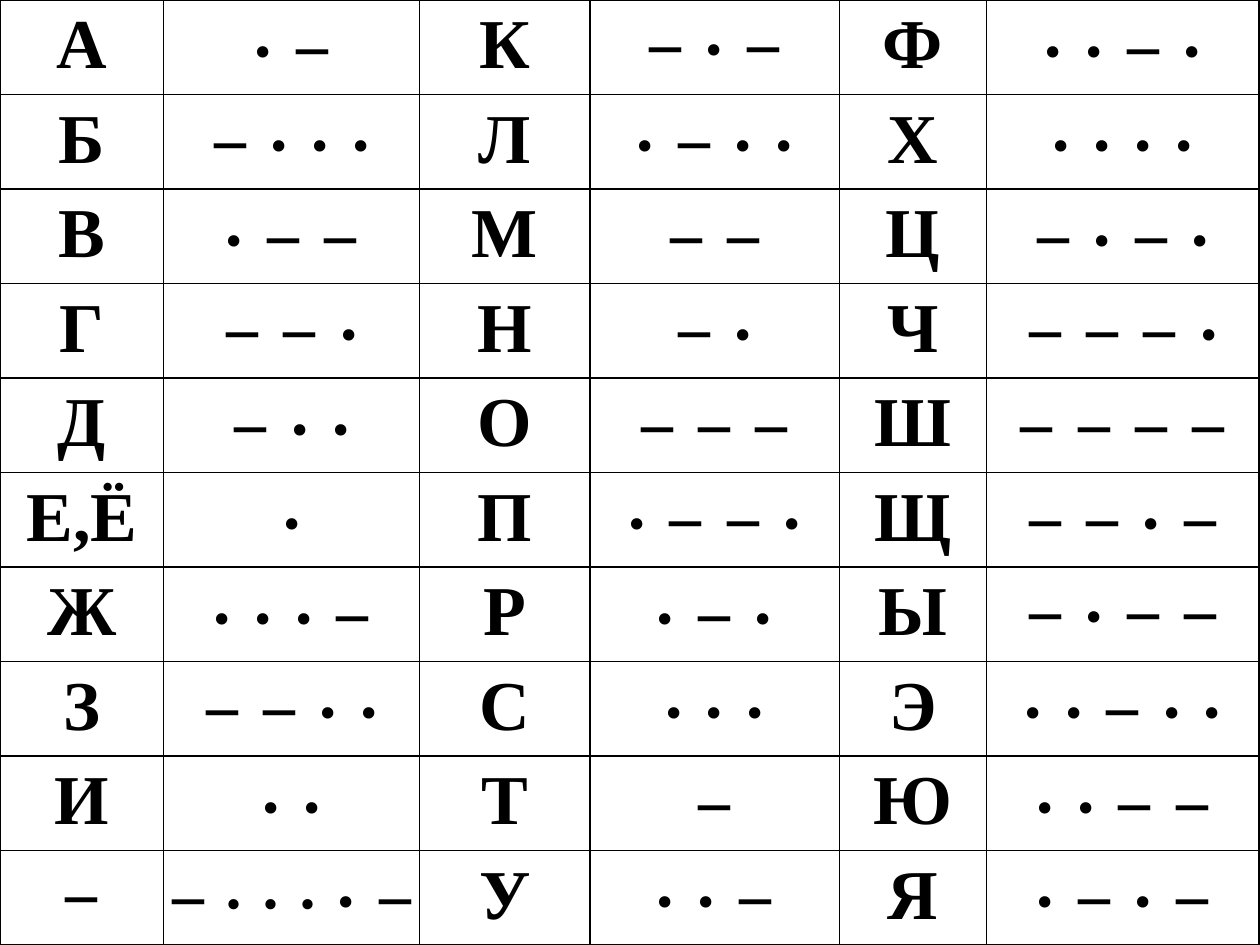
from lxml.etree import SubElement
from pptx import Presentation
from pptx.dml.color import RGBColor
from pptx.enum.text import MSO_ANCHOR, PP_ALIGN
from pptx.oxml.ns import qn
from pptx.util import Cm, Pt

MORSE_ROWS = [
    ("А", "·−", "К", "−·−", "Ф", "··−·"),
    ("Б", "−···", "Л", "·−··", "Х", "····"),
    ("В", "·−−", "М", "−−", "Ц", "−·−·"),
    ("Г", "−−·", "Н", "−·", "Ч", "−−−·"),
    ("Д", "−··", "О", "−−−", "Ш", "−−−−"),
    ("Е,Ё", "·", "П", "·−−·", "Щ", "−−·−"),
    ("Ж", "···−", "Р", "·−·", "Ы", "−·−−"),
    ("З", "−−··", "С", "···", "Э", "··−··"),
    ("И", "··", "Т", "−", "Ю", "··−−"),
    ("−", "−····−", "У", "··−", "Я", "·−·−"),
]
COLUMN_WIDTHS = [3.3, 5.16, 3.43, 5.03, 2.97, 5.49]
ROW_HEIGHT = 1.905
CODE_MARGIN = 0.08
COLORS = {"ink": "000000", "paper": "FFFFFF"}
FONT_NAME = "Times New Roman"
NO_BREAK_SPACE = chr(160)
LOOSE_CODES = {"К", "Ы"}  # letters whose code keeps normal margins and spacing
LONG_CODE = "−····−"


def draw_borders(cell):
    properties = cell._tc.get_or_add_tcPr()
    for side in ("lnL", "lnR", "lnT", "lnB"):
        line = SubElement(properties, qn(f"a:{side}"), w=str(Pt(1)))
        fill = SubElement(line, qn("a:solidFill"))
        SubElement(fill, qn("a:srgbClr"), val=COLORS["ink"])


def write_cell(cell, parts):
    """Fill a cell with (text, size) parts; a size of None keeps the paragraph's."""
    draw_borders(cell)
    cell.fill.solid()
    cell.fill.fore_color.rgb = RGBColor.from_string(COLORS["paper"])
    paragraph = cell.text_frame.paragraphs[0]
    paragraph.alignment = PP_ALIGN.CENTER
    paragraph.font.name = FONT_NAME
    paragraph.font.size = Pt(40)
    paragraph.font.bold = True
    paragraph.font.color.rgb = RGBColor.from_string(COLORS["ink"])
    for text, size in parts:
        run = paragraph.add_run()
        run.text = text
        if size:
            run.font.size = Pt(size)
    return paragraph


def write_letter(cell, letter):
    paragraph = write_cell(cell, [(letter, None)])
    if letter == "−":
        cell.vertical_anchor = MSO_ANCHOR.BOTTOM
        paragraph.line_spacing = Pt(23)


def write_code(cell, letter, code):
    text = NO_BREAK_SPACE.join(code)
    parts = [(text, None)]
    if code == LONG_CODE:
        parts = [(text[0], None), (text[1:8], 36), (text[8:], None)]
    paragraph = write_cell(cell, parts)
    cell.vertical_anchor = MSO_ANCHOR.BOTTOM
    if letter not in LOOSE_CODES:
        paragraph.line_spacing = Pt(12 if code == LONG_CODE else 23)
        cell.margin_left = cell.margin_right = Cm(CODE_MARGIN)
        cell.margin_top = cell.margin_bottom = Cm(CODE_MARGIN)


def main():
    presentation = Presentation()
    presentation.slide_width, presentation.slide_height = Cm(25.4), Cm(19.05)
    slide = presentation.slides.add_slide(presentation.slide_layouts[6])
    table = slide.shapes.add_table(
        len(MORSE_ROWS), len(COLUMN_WIDTHS), 0, 0,
        Cm(sum(COLUMN_WIDTHS)), Cm(ROW_HEIGHT * len(MORSE_ROWS)),
    ).table
    table.first_row = table.horz_banding = False
    for column, width in zip(table.columns, COLUMN_WIDTHS):
        column.width = Cm(width)
    for row_index, entries in enumerate(MORSE_ROWS):
        table.rows[row_index].height = Cm(ROW_HEIGHT)
        for column_index in range(0, len(entries), 2):
            letter, code = entries[column_index:column_index + 2]
            write_letter(table.cell(row_index, column_index), letter)
            write_code(table.cell(row_index, column_index + 1), letter, code)
    presentation.save("out.pptx")


if __name__ == "__main__":
    main()
